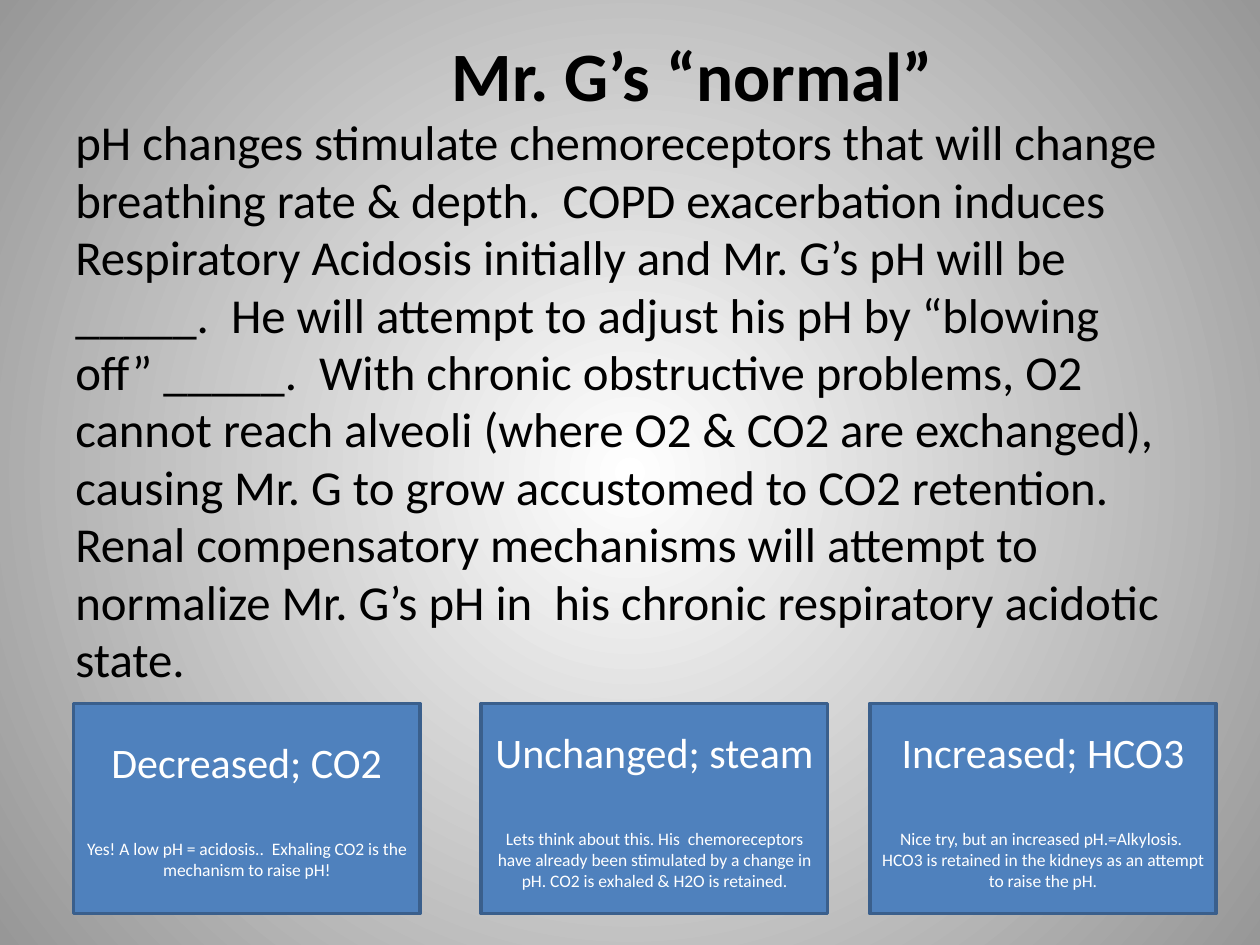
from dataclasses import dataclass

from pptx import Presentation
from pptx.dml.color import RGBColor
from pptx.enum.shapes import MSO_SHAPE
from pptx.enum.text import MSO_ANCHOR, PP_ALIGN
from pptx.oxml import parse_xml
from pptx.oxml.ns import nsdecls
from pptx.util import Pt

RECT = MSO_SHAPE.RECTANGLE
MIDDLE = MSO_ANCHOR.MIDDLE
LEFT, CENTER = PP_ALIGN.LEFT, PP_ALIGN.CENTER


@dataclass(frozen=True)
class Theme:
    font: str = "Calibri"
    text: str = "000000"
    card_text: str = "FFFFFF"
    card_fill: str = "4F81BD"
    card_line: str = "3A5F8C"
    bg_center: str = "FFFFFF"
    bg_edge: str = "979797"
    title: float = 39.6
    body: float = 27.9
    answer: float = 24
    feedback: float = 10


THEME = Theme()

TITLE = "Mr. G’s “normal”"
BODY = (
    "pH changes stimulate chemoreceptors that will change breathing rate & depth.  "
    "COPD exacerbation induces Respiratory Acidosis initially and Mr. G’s pH will be _____.  "
    "He will attempt to adjust his pH by “blowing off” _____.  "
    "With chronic obstructive problems, O2 cannot reach alveoli (where O2 & CO2 are exchanged), "
    "causing Mr. G to grow accustomed to CO2 retention. "
    "Renal compensatory mechanisms will attempt to normalize Mr. G’s pH in  his chronic "
    "respiratory acidotic state."
)
CARDS = [
    (42, "Decreased; CO2",
     "Yes! A low pH = acidosis..  Exhaling CO2 is the mechanism to raise pH!"),
    (275, "Unchanged; steam",
     "Lets think about this. His  chemoreceptors have already been stimulated by a "
     "change in pH. CO2 is exhaled & H2O is retained."),
    (497, "Increased; HCO3",
     "Nice try, but an increased pH.=Alkylosis.  HCO3 is retained in the kidneys as "
     "an attempt to raise the pH."),
]
CARD_TOP, CARD_WIDTH, CARD_HEIGHT = 402, 198, 120


def rgb(value):
    return RGBColor.from_string(value)


def write(p, text, size, color=THEME.text, bold=False, align=LEFT, indent=0,
          before=0, spacing=1.0):
    """Fill one paragraph with formatted text."""
    p.alignment = align
    p.space_before = Pt(before)
    p.line_spacing = spacing
    if indent:
        p._p.get_or_add_pPr().set("marL", str(Pt(indent)))
    r = p.add_run()
    r.text = text
    r.font.name = THEME.font
    r.font.size = Pt(size)
    r.font.bold = bold
    r.font.color.rgb = rgb(color)


def set_background(slide):
    """Radial gradient, light in the centre."""
    slide.element.cSld.insert(0, parse_xml(
        f'<p:bg {nsdecls("p", "a")}><p:bgPr><a:gradFill rotWithShape="1"><a:gsLst>'
        f'<a:gs pos="0"><a:srgbClr val="{THEME.bg_center}"/></a:gs>'
        f'<a:gs pos="100000"><a:srgbClr val="{THEME.bg_edge}"/></a:gs></a:gsLst>'
        '<a:path path="circle"><a:fillToRect l="50000" t="50000" r="50000" b="50000"/>'
        '</a:path></a:gradFill><a:effectLst/></p:bgPr></p:bg>'))


def add_question(slide, x, y, w, h):
    tf = slide.shapes.add_textbox(Pt(x), Pt(y), Pt(w), Pt(h)).text_frame
    tf.word_wrap = True
    tf.vertical_anchor = MIDDLE
    write(tf.paragraphs[0], TITLE, THEME.title, bold=True, indent=215)
    write(tf.add_paragraph(), BODY, THEME.body, spacing=0.98)


def add_card(slide, x, y, w, h, answer, feedback):
    sp = slide.shapes.add_shape(RECT, Pt(x), Pt(y), Pt(w), Pt(h))
    sp.shadow.inherit = False
    sp.fill.solid()
    sp.fill.fore_color.rgb = rgb(THEME.card_fill)
    sp.line.color.rgb = rgb(THEME.card_line)
    sp.line.width = Pt(2)
    tf = sp.text_frame
    tf.word_wrap = True
    tf.vertical_anchor = MIDDLE
    write(tf.paragraphs[0], answer, THEME.answer, color=THEME.card_text, align=CENTER)
    write(tf.add_paragraph(), feedback, THEME.feedback, color=THEME.card_text,
          align=CENTER, before=29)


def main():
    prs = Presentation()
    prs.slide_width, prs.slide_height = Pt(720), Pt(540)
    slide = prs.slides.add_slide(prs.slide_layouts[6])
    set_background(slide)
    add_question(slide, 36, 21.6, 648, 368.6)
    for x, answer, feedback in CARDS:
        add_card(slide, x, CARD_TOP, CARD_WIDTH, CARD_HEIGHT, answer, feedback)
    prs.save("out.pptx")


if __name__ == "__main__":
    main()
